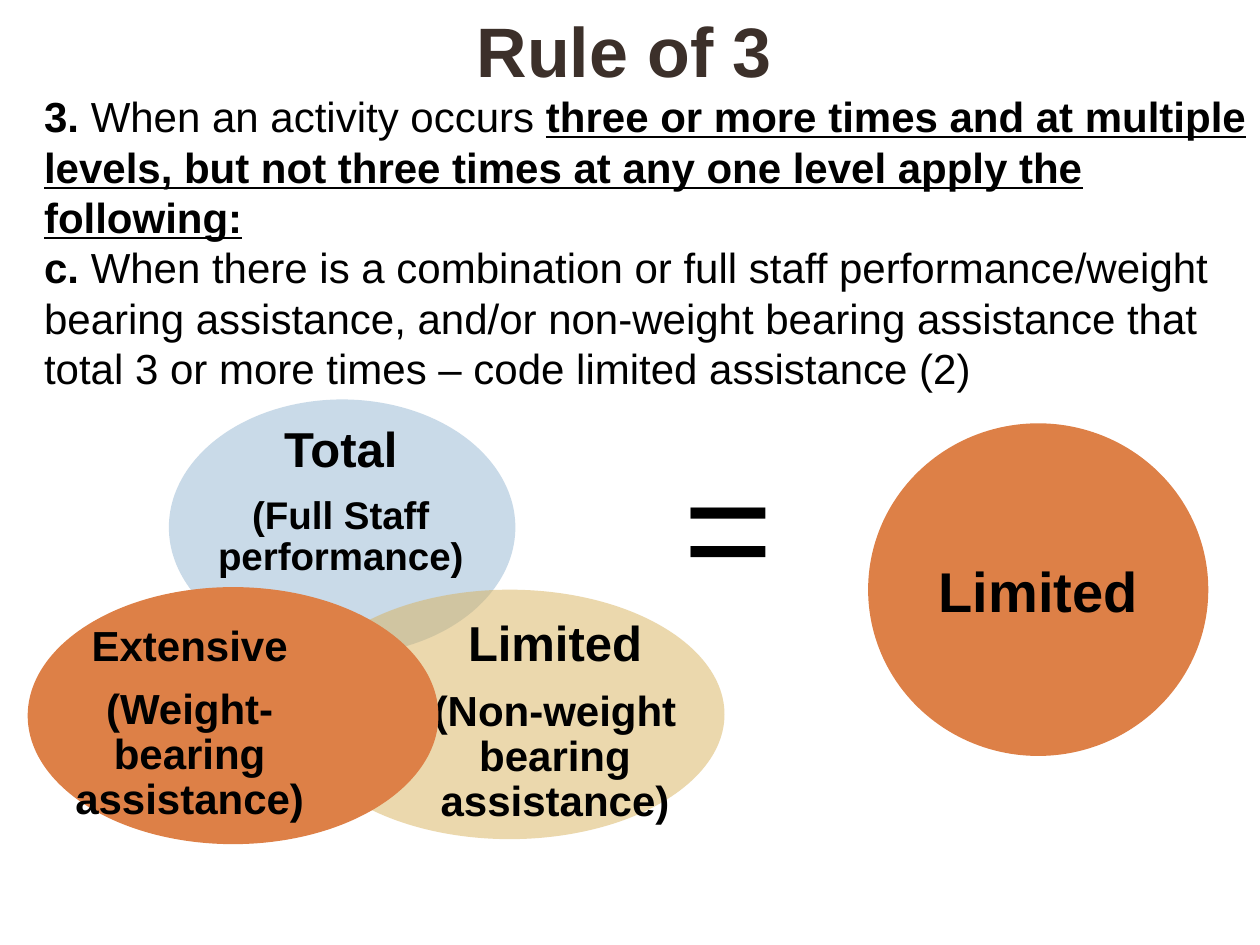
from lxml import etree
from pptx import Presentation
from pptx.dml.color import RGBColor
from pptx.enum.shapes import MSO_SHAPE
from pptx.enum.text import MSO_ANCHOR, MSO_AUTO_SIZE, PP_ALIGN
from pptx.oxml.ns import qn
from pptx.util import Inches, Pt

CENTER, LEFT = PP_ALIGN.CENTER, PP_ALIGN.LEFT
MIDDLE, TOP, BOTTOM = MSO_ANCHOR.MIDDLE, MSO_ANCHOR.TOP, MSO_ANCHOR.BOTTOM
NO_AUTOFIT = MSO_AUTO_SIZE.NONE
OVAL = MSO_SHAPE.OVAL
BLACK, BROWN, ORANGE, BLUE, SAND = "000000", "3C302A", "DD8047", "94B6D2", "D8B25C"

deck = Presentation()
deck.slide_width, deck.slide_height = Inches(10), Inches(7.5)
COL, ROW = deck.slide_width / 100, deck.slide_height / 100
slide = deck.slides.add_slide(deck.slide_layouts[1])
shapes = slide.shapes


def area(left, top, width, height):
    return [round(v) for v in (left * COL, top * ROW, width * COL, height * ROW)]


def write(paragraph, text, size, color=BLACK, bold=True, underline=False):
    run = paragraph.add_run()
    run.text = text
    font = run.font
    font.name, font.size, font.bold, font.underline = "Arial", Pt(size), bold, underline
    font.color.rgb = RGBColor.from_string(color)


title, rule = shapes.title, slide.placeholders[1]
for holder, place, anchor in (
    (title, (3.3, 0, 92.5, 11.07), BOTTOM),
    (rule, (2.5, 8.93, 97.5, 33.6), TOP),
):
    holder.left, holder.top, holder.width, holder.height = area(*place)
    holder.text_frame.auto_size = NO_AUTOFIT
    holder.text_frame.word_wrap = True
    holder.text_frame.vertical_anchor = anchor

title.text_frame.margin_bottom = Inches(0.1)
heading = title.text_frame.paragraphs[0]
heading.alignment = CENTER
write(heading, "Rule of 3", 40, BROWN)

clauses = [
    [("3.", True, False),
     (" When an activity occurs ", False, False),
     ("three or more times and at multiple levels, but not three times "
      "at any one level apply the following:", True, True)],
    [("c.", True, False),
     (" When there is a combination or full staff performance/weight bearing "
      "assistance, and/or non-weight bearing assistance that total 3 or more "
      "times – code limited assistance (2)", False, False)],
]
for index, clause in enumerate(clauses):
    paragraph = rule.text_frame.add_paragraph() if index else rule.text_frame.paragraphs[0]
    properties = paragraph._p.get_or_add_pPr()
    properties.set("marL", "0")
    properties.set("indent", "0")
    etree.SubElement(properties, qn("a:buNone"))
    paragraph.alignment = LEFT
    paragraph.space_before = Pt(0)
    for text, bold, underline in clause:
        write(paragraph, text, 24, BLACK, bold, underline)

levels = [
    ((13.4, 42.27, 27.5, 27.07), BLUE, 50, (17, 47.07, 20.1, 12.13),
     [("Total", 28), ("(Full Staff performance)", 22)]),
    ((23.4, 62.4, 34.1, 26.4), SAND, 50, (33.8, 69.2, 20.5, 14.53),
     [("Limited", 28), ("(Non-weight bearing assistance)", 24)]),
    ((2.2, 62.13, 32.6, 27.2), ORANGE, 100, (5.3, 69.2, 19.5, 14.93),
     [("Extensive", 24), ("(Weight-bearing assistance)", 24)]),
    ((68.9, 44.8, 27, 35.2), ORANGE, 100, (68.9, 44.8, 27, 35.2),
     [("Limited", 32)]),
]
for place, color, opacity, label_place, lines in levels:
    circle = shapes.add_shape(OVAL, *area(*place))
    circle.shadow.inherit = False
    circle.line.fill.background()
    circle.fill.solid()
    circle.fill.fore_color.rgb = RGBColor.from_string(color)
    if opacity < 100:
        tint = circle._element.spPr.find(qn("a:solidFill"))[0]
        etree.SubElement(tint, qn("a:alpha"), val=str(opacity * 1000))
    label = shapes.add_textbox(*area(*label_place)).text_frame
    label.word_wrap = True
    label.vertical_anchor = MIDDLE
    label.margin_left = label.margin_right = label.margin_top = label.margin_bottom = 0
    for index, (text, size) in enumerate(lines):
        paragraph = label.add_paragraph() if index else label.paragraphs[0]
        paragraph.alignment = CENTER
        if len(lines) > 1:
            paragraph.line_spacing = 0.9
            paragraph.space_after = Pt(10)
        write(paragraph, text, size)

equals = shapes.add_textbox(*area(53.3, 44.8, 11.7, 21.07)).text_frame
equals.word_wrap = True
write(equals.paragraphs[0], "=", 88, BLACK, False)

deck.save("out.pptx")
